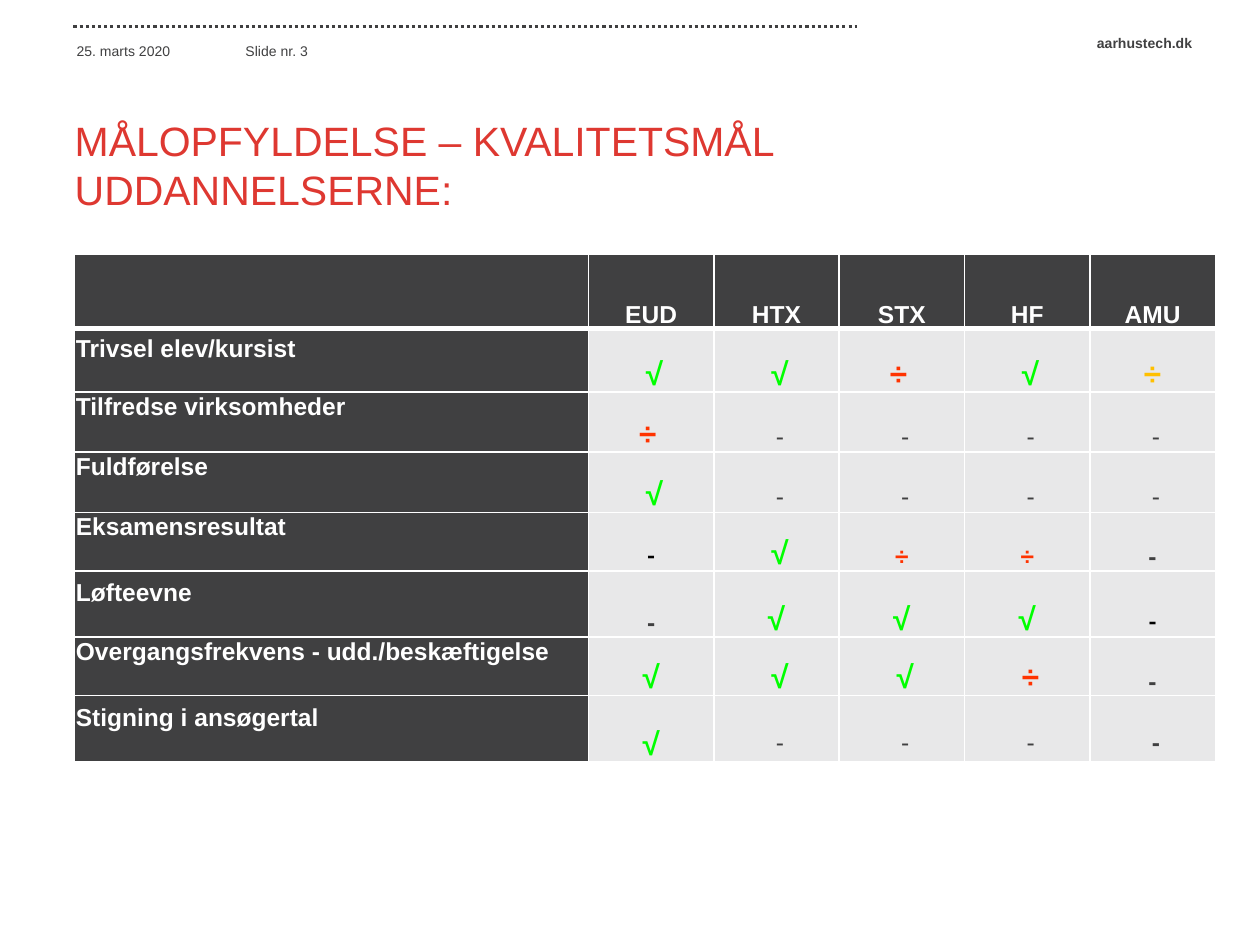
"""Build the slide with the table of quality goals per school type."""
from typing import NamedTuple

from lxml.etree import SubElement
from pptx import Presentation
from pptx.dml.color import RGBColor
from pptx.enum.dml import MSO_LINE
from pptx.enum.shapes import MSO_CONNECTOR
from pptx.enum.text import MSO_ANCHOR, MSO_AUTO_SIZE, PP_ALIGN
from pptx.oxml.ns import qn
from pptx.util import Pt

DARK = RGBColor(0x40, 0x40, 0x41)
RULE = RGBColor(0x3F, 0x3F, 0x40)
PALE = RGBColor(0xE8, 0xE8, 0xE9)
WHITE = RGBColor(0xFF, 0xFF, 0xFF)
BLACK = RGBColor(0x00, 0x00, 0x00)
TITLE = RGBColor(0xDE, 0x38, 0x31)
GREEN = RGBColor(0x00, 0xFF, 0x00)
RED = RGBColor(0xFF, 0x33, 0x00)
AMBER = RGBColor(0xFF, 0xC0, 0x00)


class Mark(NamedTuple):
    text: str
    color: RGBColor
    size: float = 14
    bold: bool = True
    left: float = 0.7
    right: float = 0.7
    top: float = 0.7
    font: str = "Arial"
    align: PP_ALIGN = PP_ALIGN.CENTER
    anchor: MSO_ANCHOR = MSO_ANCHOR.BOTTOM
    space: float = 1


class Row(NamedTuple):
    name: str
    high: float
    top: float
    marks: list


class Note(NamedTuple):
    text: str
    left: float
    top: float
    width: float
    high: float
    bold: bool
    align: PP_ALIGN
    anchor: MSO_ANCHOR


TICK = Mark("√", GREEN, 18)
TICK_IN = TICK._replace(left=4.6)
FAIL = Mark("÷", RED, 18)
FAIL_OUT = FAIL._replace(right=4.6)
FAIL_IN = FAIL._replace(left=4.6)
SMALL = FAIL_IN._replace(size=14, left=0.7)
PART = Mark("÷", AMBER, 18)
DASH = Mark("-", DARK)
INK = Mark("-", BLACK, font="Calibri")
NONE = Mark("-", DARK, bold=False, left=4.6, anchor=MSO_ANCHOR.MIDDLE, space=2)

HEADS = ["EUD", "HTX", "STX", "HF", "AMU"]
ROWS = [
    Row("Trivsel elev/kursist", 36.3, 3.5, [TICK_IN, TICK_IN, FAIL_OUT, TICK_IN, PART]),
    Row("Tilfredse virksomheder", 33.4, 0.7, [FAIL_OUT] + [NONE] * 4),
    Row("Fuldførelse", 33.4, 0.7, [TICK_IN] + [NONE] * 4),
    Row("Eksamensresultat", 33.5, 0.7, [INK, TICK_IN, SMALL, SMALL, DASH]),
    Row("Løfteevne", 37.8, 5, [DASH, TICK, TICK, TICK, INK]),
    Row("Overgangsfrekvens - udd./beskæftigelse", 33.5, 0.7, [TICK, TICK_IN, TICK_IN, FAIL_IN, DASH]),
    Row("Stigning i ansøgertal", 37.8, 5, [TICK] + [NONE] * 3 + [NONE._replace(bold=True)]),
]
NOTES = [
    Note("aarhustech.dk", 563.8, 15.8, 124.6, 17.3, True, PP_ALIGN.RIGHT, MSO_ANCHOR.MIDDLE),
    Note("25. marts 2020", 36.7, 15.1, 90.7, 22.3, False, PP_ALIGN.LEFT, MSO_ANCHOR.BOTTOM),
    Note("Slide nr. 3", 133.2, 15.1, 90.7, 22.3, False, PP_ALIGN.LEFT, MSO_ANCHOR.BOTTOM),
]


def style(para, size: float, color: RGBColor, bold: bool, face: str = "Arial") -> None:
    for run in para.runs:
        run.font.name = face
        run.font.size = Pt(size)
        run.font.bold = bold
        run.font.color.rgb = color


def draw_note(slide, note: Note) -> None:
    box = slide.shapes.add_textbox(Pt(note.left), Pt(note.top), Pt(note.width), Pt(note.high))
    frame = box.text_frame
    frame.word_wrap = True
    frame.vertical_anchor = note.anchor
    frame.text = note.text
    frame.paragraphs[0].alignment = note.align
    style(frame.paragraphs[0], 8, DARK, note.bold)


def draw_rule(slide) -> None:
    rule = slide.shapes.add_connector(MSO_CONNECTOR.STRAIGHT, Pt(42), Pt(14.9), Pt(490), Pt(14.9))
    rule.line.color.rgb = RULE
    rule.line.width = Pt(1.75)
    rule.line.dash_style = MSO_LINE.ROUND_DOT
    SubElement(rule._element.spPr, qn("a:effectLst"))


def draw_title(slide) -> None:
    title = slide.shapes.title
    title.left, title.top, title.width, title.height = Pt(42.7), Pt(66.2), Pt(487.4), Pt(62.6)
    frame = title.text_frame
    frame.auto_size = MSO_AUTO_SIZE.NONE
    frame.word_wrap = True
    frame.vertical_anchor = MSO_ANCHOR.TOP
    frame.margin_left = frame.margin_right = frame.margin_top = frame.margin_bottom = 0
    frame.text = "MÅLOPFYLDELSE – KVALITETSMÅL UDDANNELSERNE:"
    frame.paragraphs[0].alignment = PP_ALIGN.LEFT
    style(frame.paragraphs[0], 23.4, TITLE, False)


def edge(cell, side: str, width: float) -> None:
    line = SubElement(cell._tc.get_or_add_tcPr(), qn(f"a:ln{side}"), w=str(Pt(width)))
    fill = SubElement(line, qn("a:solidFill"))
    SubElement(fill, qn("a:srgbClr"), val=str(WHITE))


def draw_cell(cell, mark: Mark, back: RGBColor, top: float, base: float) -> None:
    for side, width in zip("LRTB", (1, 1, top, base)):
        edge(cell, side, width)
    cell.fill.solid()
    cell.fill.fore_color.rgb = back
    cell.margin_left, cell.margin_right = Pt(mark.left), Pt(mark.right)
    cell.margin_top, cell.margin_bottom = Pt(mark.top), 0
    cell.vertical_anchor = mark.anchor
    cell.text_frame.text = mark.text
    para = cell.text_frame.paragraphs[0]
    para.alignment = mark.align
    para.line_spacing = mark.space
    style(para, mark.size, mark.color, mark.bold, mark.font)


def draw_table(slide) -> None:
    highs = [42.5] + [row.high for row in ROWS]
    wides = [293.6] + [71.65] * len(HEADS)
    frame = slide.shapes.add_table(len(highs), len(wides), Pt(42.7), Pt(145.3), Pt(sum(wides)), Pt(sum(highs)))
    table = frame.table
    for col, wide in zip(table.columns, wides):
        col.width = Pt(wide)
    for line, high in zip(table.rows, highs):
        line.height = Pt(high)
    for c, head in enumerate([""] + HEADS):
        draw_cell(table.cell(0, c), Mark(head, WHITE), DARK, 1, 3)
    for r, row in enumerate(ROWS, 1):
        top = 3 if r == 1 else 1
        label = Mark(row.name, WHITE, top=row.top, align=PP_ALIGN.LEFT, anchor=MSO_ANCHOR.TOP)
        draw_cell(table.cell(r, 0), label, DARK, top, 1)
        for c, mark in enumerate(row.marks, 1):
            draw_cell(table.cell(r, c), mark, PALE, top, 1)


def main() -> None:
    deck = Presentation()
    deck.slide_width, deck.slide_height = Pt(720), Pt(540)
    slide = deck.slides.add_slide(deck.slide_layouts[5])
    draw_rule(slide)
    for note in NOTES:
        draw_note(slide, note)
    draw_title(slide)
    draw_table(slide)
    deck.save("out.pptx")


if __name__ == "__main__":
    main()
